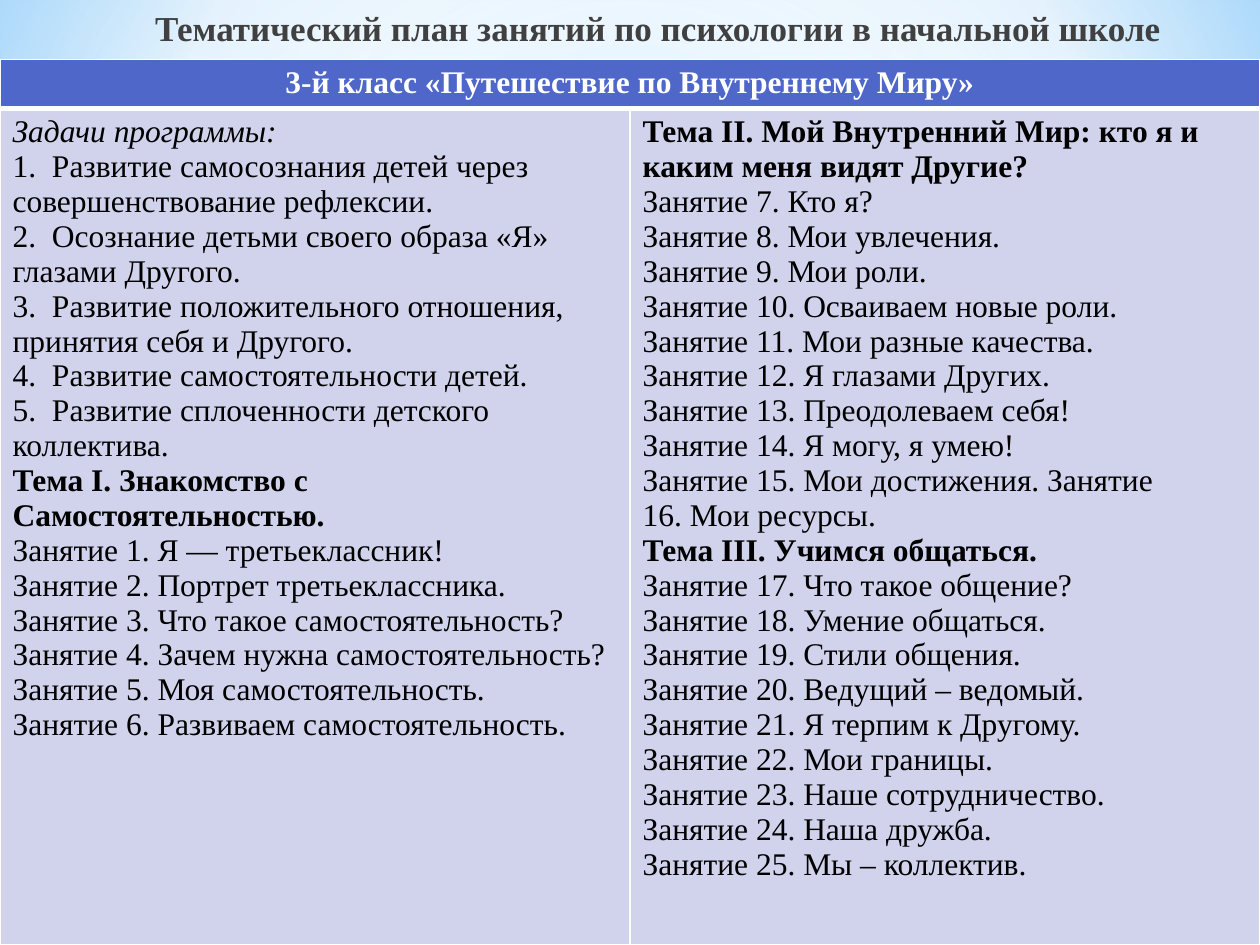
from lxml import etree
from pptx import Presentation
from pptx.dml.color import RGBColor
from pptx.enum import shapes, text
from pptx.oxml import parse_xml
from pptx.oxml.ns import nsdecls, qn
from pptx.util import Pt

FONT = "Times New Roman"
COLORS = {"title": "404040", "header": "4E67C8", "body": "D0D3EB",
          "white": "FFFFFF", "black": "000000"}
BACKDROP = [(0, "9ED5FF", 100), (60, "FFFFFF", 100), (100, "5BB9FF", 100)]
GLOW = [(0, "FFFFFF", 89), (48, "FFFFFF", 62), (100, "B4DCFA", 79)]

TITLE = "Тематический план занятий по психологии в начальной школе"
HEADER = "3-й класс «Путешествие по Внутреннему Миру»"
GOALS = [
    "Развитие самосознания детей через совершенствование рефлексии.",
    "Осознание детьми своего образа «Я» глазами Другого.",
    "Развитие положительного отношения, принятия себя и Другого.",
    "Развитие самостоятельности детей.",
    "Развитие сплоченности детского коллектива.",
]
TOPICS = [
    ("Тема I. Знакомство с Самостоятельностью.", [
        "Занятие 1. Я — третьеклассник!",
        "Занятие 2. Портрет третьеклассника.",
        "Занятие 3. Что такое самостоятельность?",
        "Занятие 4. Зачем нужна самостоятельность?",
        "Занятие 5. Моя самостоятельность.",
        "Занятие 6. Развиваем самостоятельность.",
    ]),
    ("Тема II. Мой Внутренний Мир: кто я и каким меня видят Другие?", [
        "Занятие 7. Кто я?",
        "Занятие 8. Мои увлечения.",
        "Занятие 9. Мои роли.",
        "Занятие 10. Осваиваем новые роли.",
        "Занятие 11. Мои разные качества.",
        "Занятие 12. Я глазами Других.",
        "Занятие 13. Преодолеваем себя!",
        "Занятие 14. Я могу, я умею!",
        "Занятие 15. Мои достижения. Занятие",
        "16. Мои ресурсы.",
    ]),
    ("Тема III. Учимся общаться.", [
        "Занятие 17. Что такое общение?",
        "Занятие 18. Умение общаться.",
        "Занятие 19. Стили общения.",
        "Занятие 20. Ведущий – ведомый.",
        "Занятие 21. Я терпим к Другому.",
        "Занятие 22. Мои границы.",
        "Занятие 23. Наше сотрудничество.",
        "Занятие 24. Наша дружба.",
        "Занятие 25. Мы – коллектив.",
    ]),
]
WIDTH, HEIGHT = 720, 540
TABLE_TOP = 34
ROW_HEIGHTS = [28, 478]
NUMBER_TAB = 22.5


def rgb(name):
    return RGBColor.from_string(COLORS[name])


def radial_fill(stops, center):
    gs = "".join(
        f'<a:gs pos="{pos * 1000}"><a:srgbClr val="{color}">'
        f'<a:alpha val="{alpha * 1000}"/></a:srgbClr></a:gs>'
        for pos, color, alpha in stops)
    rect = " ".join(f'{side}="{v * 1000}"' for side, v in zip("ltrb", center))
    return parse_xml(
        f'<a:gradFill {nsdecls("a")} rotWithShape="1"><a:gsLst>{gs}</a:gsLst>'
        f'<a:path path="circle"><a:fillToRect {rect}/></a:path></a:gradFill>')


def set_gradient(fill, parent, stops, center):
    fill.gradient()
    old = parent.find(qn("a:gradFill"))
    parent.replace(old, radial_fill(stops, center))


def style(p, size, color, bold=False, italic=False):
    p.font.name, p.font.size = FONT, Pt(size)
    p.font.bold, p.font.italic = bold, italic
    p.font.color.rgb = rgb(color)


def add_tab_stop(p, position):
    tabs = etree.Element(qn("a:tabLst"))
    etree.SubElement(tabs, qn("a:tab"), pos=str(Pt(position)), algn="l")
    p._p.get_or_add_pPr().insert(0, tabs)


def style_cell(cell, fill, top, bottom):
    cell.fill.solid()
    cell.fill.fore_color.rgb = rgb(fill)
    tc_pr = cell._tc.get_or_add_tcPr()
    for i, (side, width) in enumerate(zip("LRTB", (1, 1, top, bottom))):
        tc_pr.insert(i, parse_xml(
            f'<a:ln{side} {nsdecls("a")} w="{Pt(width)}"><a:solidFill>'
            f'<a:srgbClr val="{COLORS["white"]}"/></a:solidFill></a:ln{side}>'))


def topic_lines(topics):
    for heading, lessons in topics:
        yield heading, "bold"
        for lesson in lessons:
            yield lesson, "plain"


def write_lines(tf, lines):
    for i, (line, kind) in enumerate(lines):
        p = tf.add_paragraph() if i else tf.paragraphs[0]
        p.text = line
        style(p, 18, "black", kind == "bold", kind == "italic")
        if kind == "numbered":
            add_tab_stop(p, NUMBER_TAB)


prs = Presentation()
prs.slide_width, prs.slide_height = Pt(WIDTH), Pt(HEIGHT)
s = prs.slides.add_slide(prs.slide_layouts[5])
bg_fill = s.background.fill
bg_fill.gradient()
set_gradient(bg_fill, s._element.cSld.bg.bgPr, BACKDROP, (20, 10, 20, 60))

title = s.shapes.title
glow = s.shapes.add_shape(shapes.MSO_SHAPE.RECTANGLE, 0, 0, Pt(WIDTH), Pt(402))
glow.shadow.inherit = False
glow.line.fill.background()
set_gradient(glow.fill, glow._element.spPr, GLOW, (50, 50, 50, 50))
title._element.addprevious(glow._element)

title.left, title.top, title.width, title.height = Pt(20), 0, Pt(680), Pt(HEIGHT)
tf = title.text_frame
tf.word_wrap = True
tf.auto_size = text.MSO_AUTO_SIZE.NONE
tf.vertical_anchor = text.MSO_ANCHOR.TOP
p = tf.paragraphs[0]
p.text = TITLE
p.alignment = text.PP_ALIGN.CENTER
p.space_before, p.space_after = Pt(2), Pt(3)
style(p, 20, "title", bold=True)
p_pr = p._p.get_or_add_pPr()
p_pr.set("marL", str(Pt(18)))
p_pr.set("indent", str(Pt(14)))

table = s.shapes.add_table(2, 2, 0, Pt(TABLE_TOP), Pt(WIDTH), Pt(sum(ROW_HEIGHTS))).table
for row, height in zip(table.rows, ROW_HEIGHTS):
    row.height = Pt(height)
for cell in table.rows[0].cells:
    style_cell(cell, "header", 1, 3)
for cell in table.rows[1].cells:
    style_cell(cell, "body", 3, 1)

header = table.cell(0, 0)
header.merge(table.cell(0, 1))
p = header.text_frame.paragraphs[0]
p.text = HEADER
p.alignment = text.PP_ALIGN.CENTER
style(p, 18, "white", bold=True)

goals = [("Задачи программы:", "italic")]
goals += [(f"{n}.\t{goal}", "numbered") for n, goal in enumerate(GOALS, 1)]
write_lines(table.cell(1, 0).text_frame, goals + list(topic_lines(TOPICS[:1])))
write_lines(table.cell(1, 1).text_frame, topic_lines(TOPICS[1:]))

prs.save("out.pptx")
